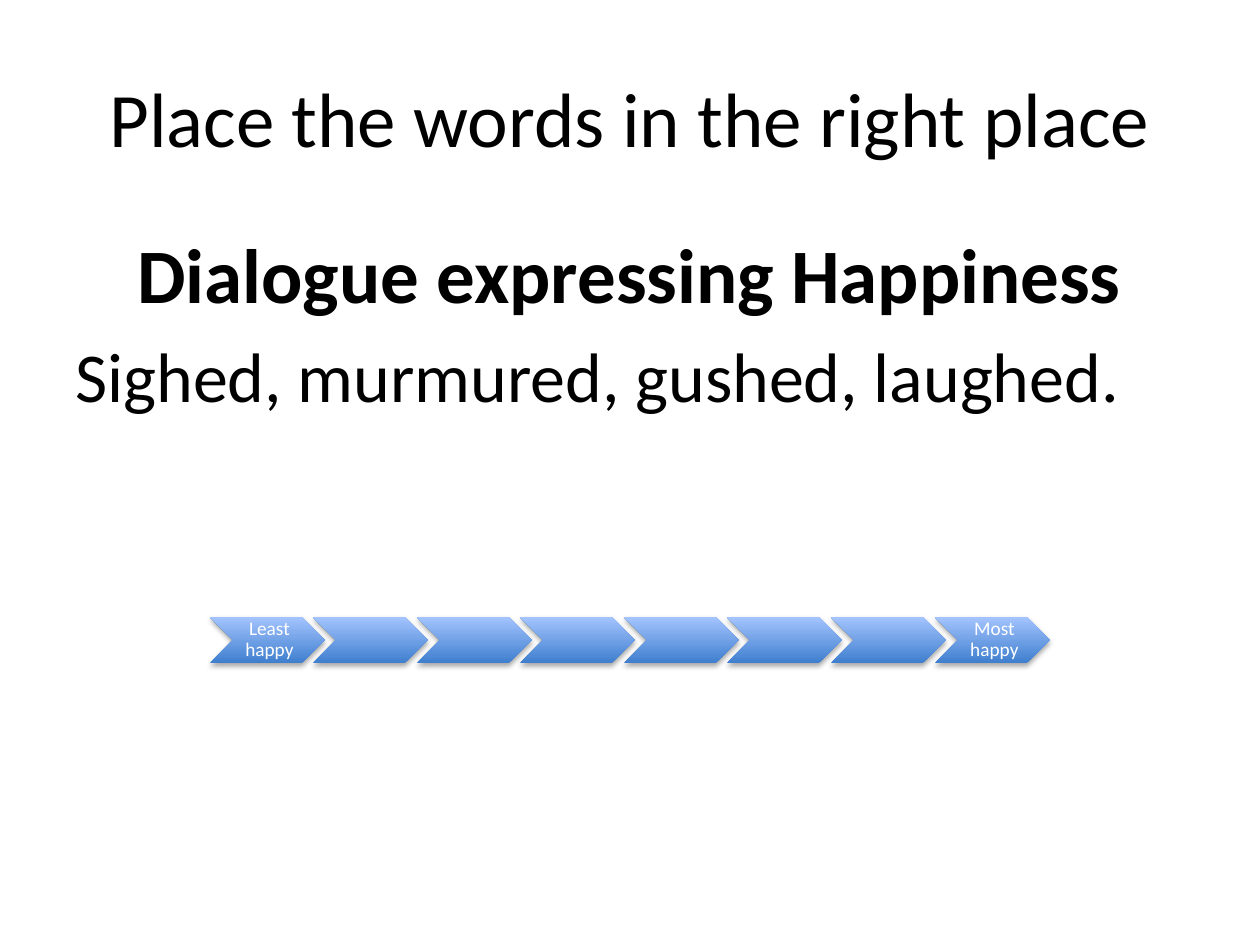
from dataclasses import dataclass

from lxml.etree import fromstring
from pptx import Presentation
from pptx.dml.color import RGBColor
from pptx.enum.shapes import MSO_SHAPE
from pptx.enum.text import MSO_ANCHOR, PP_ALIGN
from pptx.oxml.ns import nsdecls
from pptx.util import Emu, Inches, Pt

SCALE = Inches(1) / 126


@dataclass(frozen=True)
class Theme:
    font: str = "Calibri"
    text: str = "000000"
    light_text: str = "FFFFFF"
    gradient: tuple = ("3F7FCE", "A4C4FF")
    shadow: str = "000000"
    heading_size: int = 44
    body_size: int = 40
    label_size: int = 11


def px(n):
    return Emu(round(n * SCALE))


class SlideBuilder:
    """Adds styled elements to one slide."""

    def __init__(self, slide, theme):
        self.slide = slide
        self.theme = theme

    def place(self, sp, box):
        sp.left, sp.top, sp.width, sp.height = map(px, box)

    def style(self, p, size, color, align=PP_ALIGN.CENTER, bold=False):
        p.alignment = align
        p.font.name = self.theme.font
        p.font.size = Pt(size)
        p.font.bold = bold
        p.font.color.rgb = RGBColor.from_string(color)

    def title(self, text, box):
        sp = self.slide.shapes.title
        self.place(sp, box)
        tf = sp.text_frame
        tf.text = text
        tf.vertical_anchor = MSO_ANCHOR.MIDDLE
        self.style(tf.paragraphs[0], self.theme.heading_size, self.theme.text)

    def body(self, heading, words, box):
        tf = self.slide.shapes.add_textbox(*map(px, box)).text_frame
        tf.word_wrap = True
        tf.text = f"{heading}\n{words}"
        p, q = tf.paragraphs
        self.style(p, self.theme.heading_size, self.theme.text, bold=True)
        self.style(q, self.theme.body_size, self.theme.text, PP_ALIGN.LEFT)
        for p in tf.paragraphs:
            p.space_before = Pt(p.font.size.pt * 0.2)

    def chevron(self, text, box):
        sp = self.slide.shapes.add_shape(MSO_SHAPE.CHEVRON, *map(px, box))
        sp.line.fill.background()
        sp.fill.gradient()
        sp.fill.gradient_angle = 90
        for stop, color in zip(sp.fill.gradient_stops, self.theme.gradient):
            stop.color.rgb = RGBColor.from_string(color)
        self.drop_shadow(sp)
        if text:
            self.label(sp.text_frame, text)

    def drop_shadow(self, sp):
        sp._element.spPr.append(fromstring(
            f'<a:effectLst {nsdecls("a")}>'
            f'<a:outerShdw blurRad="{Pt(3.1)}" dist="{Pt(1.8)}" dir="5400000" rotWithShape="0">'
            f'<a:srgbClr val="{self.theme.shadow}"><a:alpha val="35000"/></a:srgbClr>'
            '</a:outerShdw></a:effectLst>'))

    def label(self, tf, text):
        tf.text = text
        tf.word_wrap = True
        tf.vertical_anchor = MSO_ANCHOR.MIDDLE
        tf.margin_left = px(6)
        tf.margin_top = tf.margin_right = tf.margin_bottom = px(2)
        p = tf.paragraphs[0]
        p.line_spacing = 0.9
        self.style(p, self.theme.label_size, self.theme.light_text)

    def scale_row(self, labels, left, top, width, height, span):
        for i, text in enumerate(labels):
            step = (span - width) * i // (len(labels) - 1)
            self.chevron(text, (left + step, top, width, height))


def main():
    prs = Presentation()
    prs.slide_width, prs.slide_height = Inches(10), Inches(7.5)
    s = SlideBuilder(prs.slides.add_slide(prs.slide_layouts[5]), Theme())
    s.title("Place the words in the right place", (63, 38, 1134, 157))
    s.body("Dialogue expressing Happiness", "Sighed, murmured, gushed, laughed.",
           (63, 220, 1134, 318))
    s.scale_row(["Least happy", *[""] * 6, "Most happy"], 210, 617, 115, 46, 840)
    prs.save("out.pptx")


if __name__ == "__main__":
    main()
